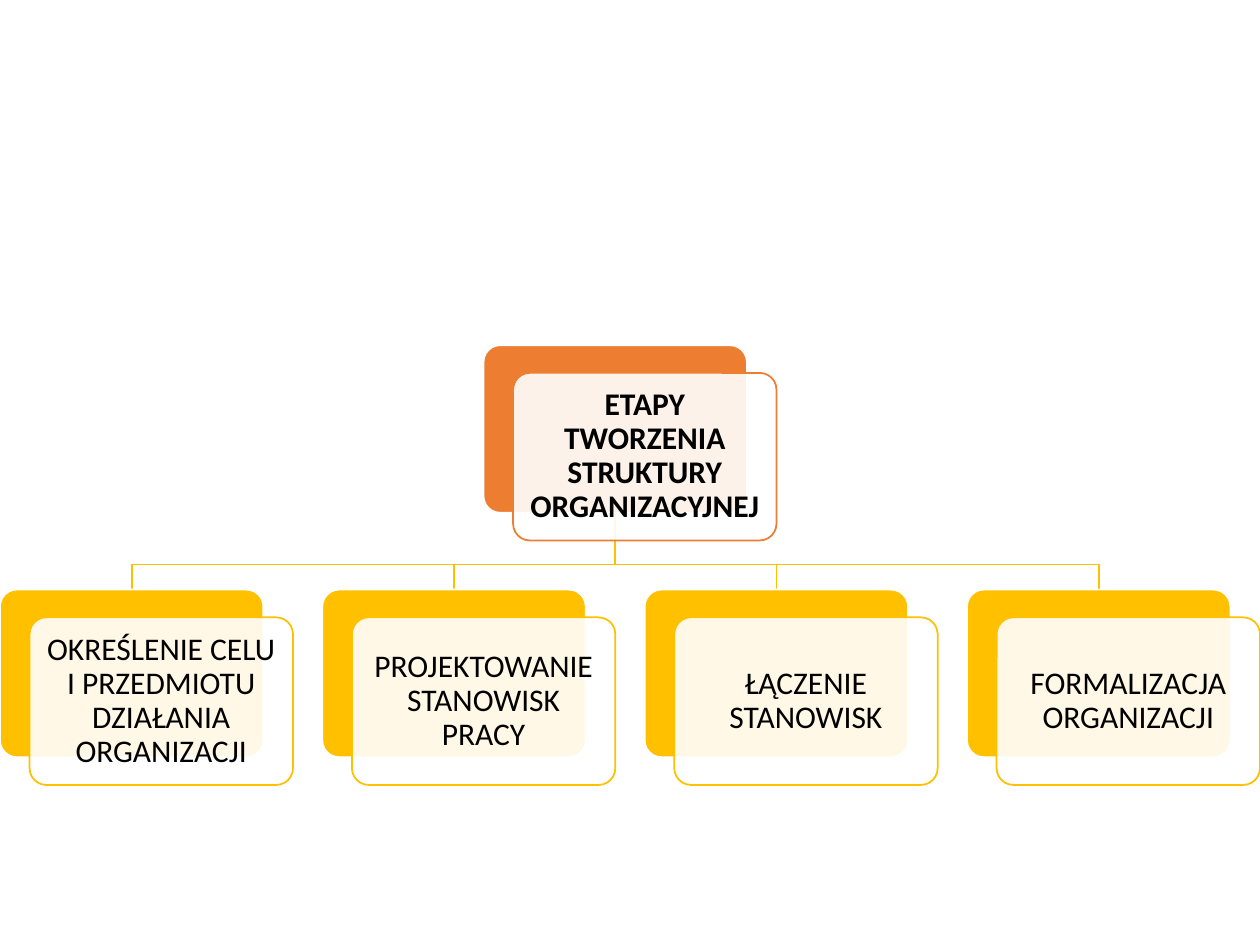
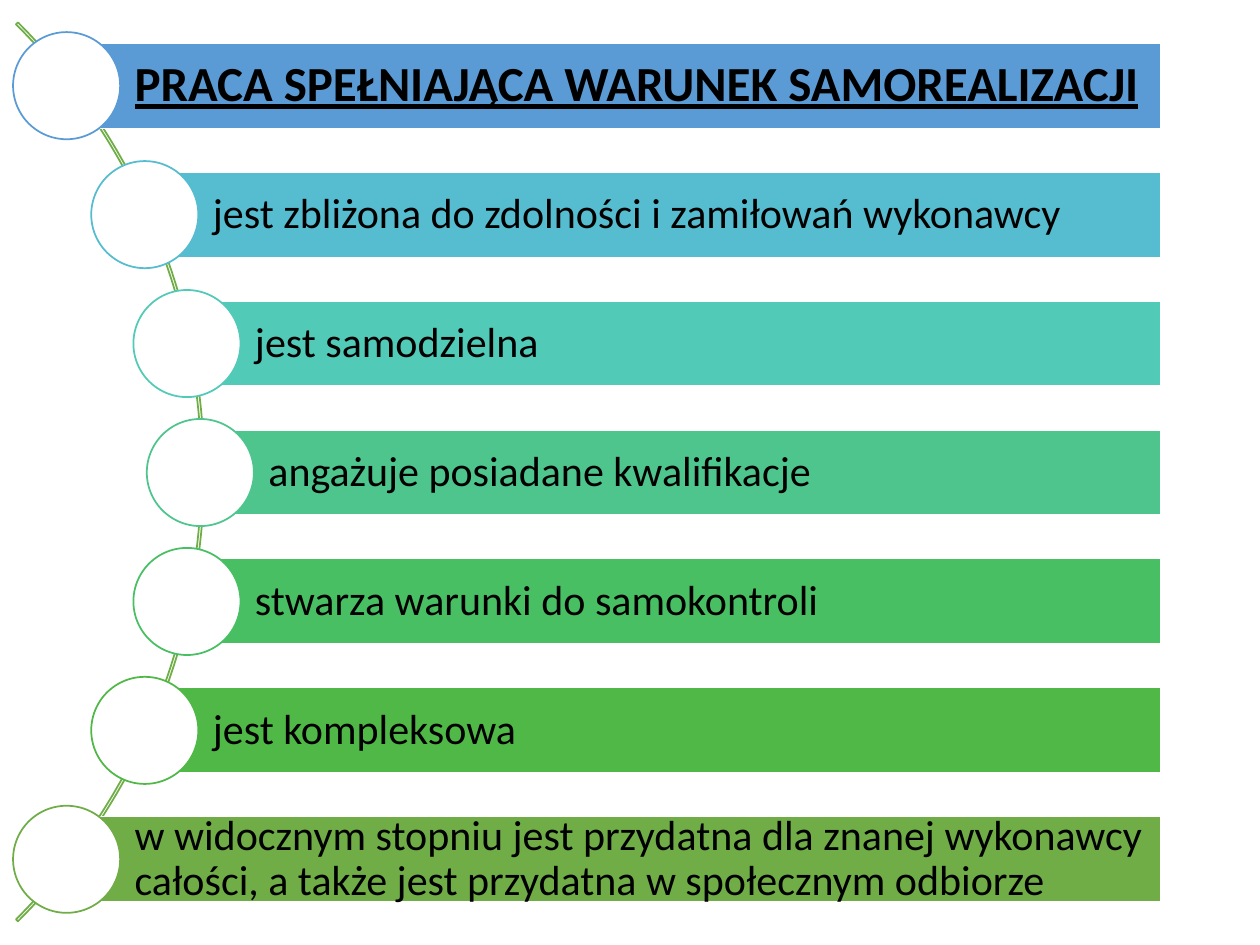
from math import sqrt

from lxml import etree
from pptx import Presentation
from pptx.dml.color import RGBColor
from pptx.enum.shapes import MSO_SHAPE
from pptx.enum.text import MSO_ANCHOR, MSO_AUTO_SIZE, PP_ALIGN
from pptx.oxml.ns import qn
from pptx.util import Inches, Pt

# Shared look
FONT = "Calibri"
BLACK = RGBColor(0x00, 0x00, 0x00)
WHITE = RGBColor(0xFF, 0xFF, 0xFF)
ORANGE = RGBColor(0xED, 0x7D, 0x31)
GOLD = RGBColor(0xFF, 0xC0, 0x00)
GREEN = RGBColor(0x70, 0xAD, 0x47)
BLUE = RGBColor(0x5B, 0x9B, 0xD5)

# Chart of stages
CARD_W, CARD_H = 2.09, 1.33
SHIFT_X, SHIFT_Y = 0.235, 0.22
ROOT = "ETAPY TWORZENIA STRUKTURY ORGANIZACYJNEJ"
STAGES = [
    "OKREŚLENIE CELU I PRZEDMIOTU DZIAŁANIA ORGANIZACJI",
    "PROJEKTOWANIE STANOWISK PRACY",
    "ŁĄCZENIE STANOWISK",
    "FORMALIZACJA ORGANIZACJI",
]

# Bars along the arc
HEAD = "PRACA SPEŁNIAJĄCA WARUNEK SAMOREALIZACJI"
TRAITS = [
    ("jest zbliżona do zdolności i zamiłowań wykonawcy", RGBColor(0x56, 0xBC, 0xD0)),
    ("jest samodzielna", RGBColor(0x52, 0xCA, 0xB8)),
    ("angażuje posiadane kwalifikacje", RGBColor(0x4D, 0xC5, 0x8D)),
    ("stwarza warunki do samokontroli", RGBColor(0x49, 0xBF, 0x64)),
    ("jest kompleksowa", RGBColor(0x50, 0xB8, 0x46)),
    ("w widocznym stopniu jest przydatna dla znanej wykonawcy całości, "
     "a także jest przydatna w społecznym odbiorze", GREEN),
]


def write(shape, text, size=18, bold=False, under=False,
          align=PP_ALIGN.CENTER, left=0.07, pad=0.07):
    frame = shape.text_frame
    frame.text = text
    frame.word_wrap = True
    frame.auto_size = MSO_AUTO_SIZE.NONE
    frame.vertical_anchor = MSO_ANCHOR.MIDDLE
    frame.margin_left = Inches(left)
    frame.margin_top = frame.margin_right = frame.margin_bottom = Inches(pad)
    para = frame.paragraphs[0]
    para.alignment = align
    para.line_spacing = 0.9
    font = para.font
    font.name, font.size = FONT, Pt(size)
    font.bold, font.underline = bold, under
    font.color.rgb = BLACK


def paint(shape, fill, line):
    if fill is None:
        shape.fill.background()
    else:
        shape.fill.solid()
        shape.fill.fore_color.rgb = fill
    shape.line.color.rgb = line
    shape.line.width = Pt(1)


def draw(slide, kind, box, fill, line):
    shape = slide.shapes.add_shape(kind, *map(Inches, box))
    shape.shadow.inherit = False
    paint(shape, fill, line)
    return shape


def place_title(slide, box):
    """Move the title to its box, in front of what is drawn so far."""
    title = slide.shapes.title
    title.left, title.top, title.width, title.height = map(Inches, box)
    title.element.getparent().append(title.element)
    return title


def add_card(slide, x, y, color):
    """Draw a coloured plate with a clear white card over it."""
    plate = draw(slide, MSO_SHAPE.ROUNDED_RECTANGLE,
                 (x, y, CARD_W, CARD_H), color, WHITE)
    card = draw(slide, MSO_SHAPE.ROUNDED_RECTANGLE,
                (x + SHIFT_X, y + SHIFT_Y, CARD_W, CARD_H), WHITE, color)
    for shape in (plate, card):
        shape.adjustments[0] = 0.1
    tint = card.element.spPr.find(".//" + qn("a:srgbClr"))
    etree.SubElement(tint, qn("a:alpha")).set("val", "90000")
    return card


def add_branch(slide, start, end, bend):
    (x, y), (to_x, to_y) = start, end
    pen = slide.shapes.build_freeform(Inches(x), Inches(y))
    pen.add_line_segments(
        [(Inches(a), Inches(b)) for a, b in ((x, bend), (to_x, bend), (to_x, to_y))],
        close=False)
    branch = pen.convert_to_shape()
    branch.shadow.inherit = False
    paint(branch, None, GOLD)


def add_tree(slide, x, y, width, height):
    """Root card above an even row of stage cards."""
    row_y = y + height - CARD_H - SHIFT_Y
    step = (width - CARD_W - SHIFT_X) / (len(STAGES) - 1)
    root_x = x + 1.5 * step
    mid = CARD_W / 2
    spots = [x + i * step for i in range(len(STAGES))]
    for spot in reversed(spots):
        add_branch(slide, (root_x + mid, y + CARD_H),
                   (spot + mid, row_y), row_y - 0.2)

    # Root
    add_card(slide, root_x, y, ORANGE)
    title = place_title(slide, (root_x + SHIFT_X + 0.04, y + SHIFT_Y + 0.04,
                                CARD_W - 0.08, CARD_H - 0.08))
    write(title, ROOT, bold=True)

    # Stages
    for spot, text in zip(spots, STAGES):
        write(add_card(slide, spot, row_y, GOLD), text)


def add_arc(slide, x, y, size):
    arc = draw(slide, MSO_SHAPE.BLOCK_ARC, (x, y, size, size), None, GREEN)
    for i, value in enumerate((189, 27, 0.00214)):
        arc.adjustments[i] = value


def add_bars(slide, y, right, height):
    """Bars whose left ends and dots follow a circle."""
    bar_h, dot = 0.68, 0.85
    hub, reach = -3.38, 4.97
    rows = [(HEAD, BLUE)] + TRAITS
    step = (height - bar_h) / (len(rows) - 1)
    for i, (text, color) in enumerate(rows):
        rise = (i - (len(rows) - 1) / 2) * step
        x = hub + sqrt(reach ** 2 - rise ** 2)
        top = y + i * step
        box = (x, top, right - x, bar_h)
        if i == 0:
            bar = place_title(slide, box)
            paint(bar, color, WHITE)
            style = dict(size=28, bold=True, under=True, pad=0.08)
        else:
            bar = draw(slide, MSO_SHAPE.RECTANGLE, box, color, WHITE)
            style = dict(size=24)
        write(bar, text, align=PP_ALIGN.LEFT, left=0.54, **style)
        draw(slide, MSO_SHAPE.OVAL,
             (x - dot / 2, top + (bar_h - dot) / 2, dot, dot), WHITE, color)


def main():
    deck = Presentation()
    deck.slide_width, deck.slide_height = Inches(10), Inches(7.5)
    layout = deck.slide_layouts[5]

    # Stages of building the structure
    add_tree(deck.slides.add_slide(layout), 0, 2.74, 10, 3.49)

    # Traits of fulfilling work
    slide = deck.slides.add_slide(layout)
    add_arc(slide, -8.47, -1.3, 10.09)
    add_bars(slide, 0.34, 9.21, 6.82)

    deck.save("out.pptx")


if __name__ == "__main__":
    main()
